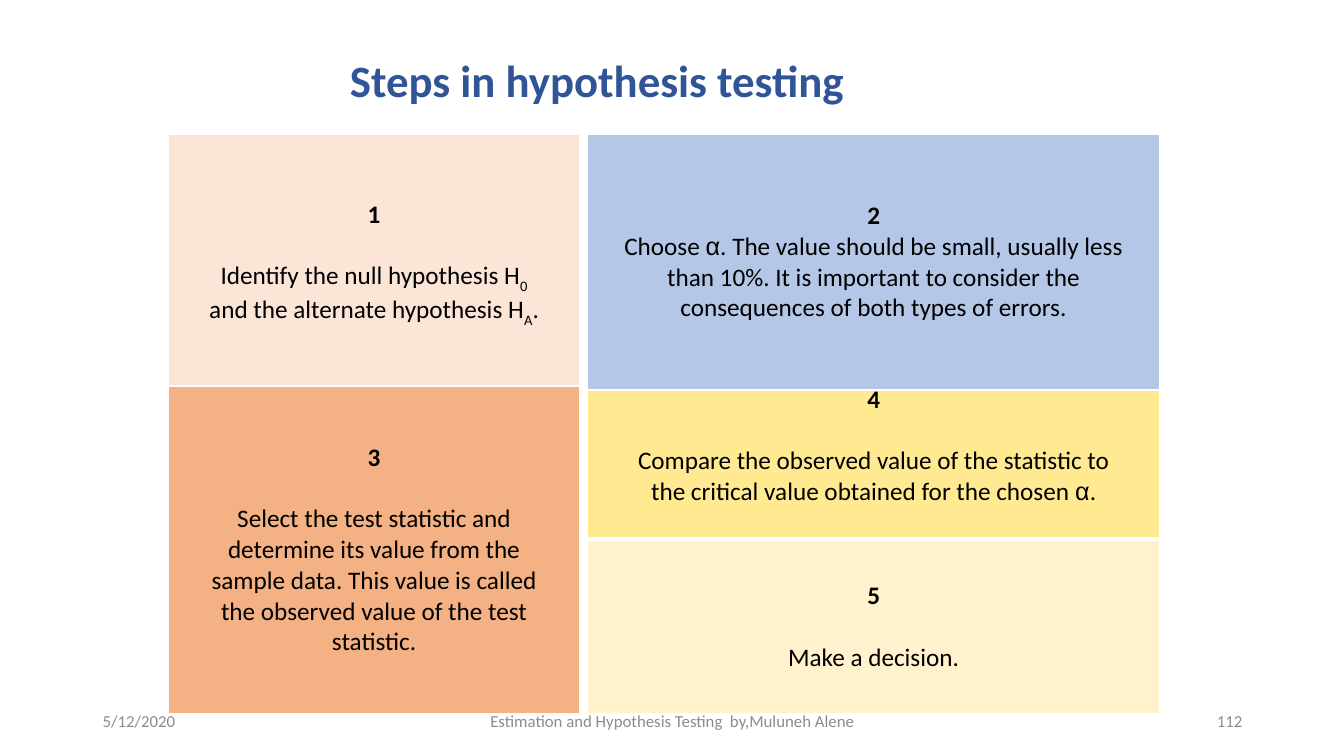
from pptx import Presentation
from pptx.dml.color import RGBColor
from pptx.enum.text import MSO_ANCHOR, PP_ALIGN
from pptx.util import Inches, Pt

LEFT, CENTER, RIGHT = PP_ALIGN.LEFT, PP_ALIGN.CENTER, PP_ALIGN.RIGHT
MIDDLE = MSO_ANCHOR.MIDDLE

BLUE = RGBColor(0x2F, 0x55, 0x97)
BLACK = RGBColor(0x00, 0x00, 0x00)
GREY = RGBColor(0x8C, 0x8C, 0x8C)
PEACH = RGBColor(0xFB, 0xE5, 0xD6)
ORANGE = RGBColor(0xF4, 0xB1, 0x83)
YELLOW = RGBColor(0xFF, 0xEA, 0x91)
CREAM = RGBColor(0xFF, 0xF2, 0xCC)
PALE_BLUE = RGBColor(0xB4, 0xC7, 0xE7)

BODY_FONT, GREEK_FONT = "Calibri", "Arial"
SLIDE_W, SLIDE_H = 13.33, 7.5
CELL_INSET = 0.31
BLANK_LINE = 22  # points, one line of 18 pt text

# Grid: (left, width) of the two columns, shared top and bottom
LEFT_COLUMN, RIGHT_COLUMN = (1.67, 4.08), (5.83, 5.67)
GRID_TOP, GRID_BOTTOM = 1.33, 7.08

# Step: number, column, top, height, fill, gap after number, text pieces.
# A piece is (text, style), the style being "", "sub" or "greek".
STEPS = [
    ("1", LEFT_COLUMN, GRID_TOP, 2.58, PEACH, BLANK_LINE,
     [("Identify the null hypothesis H", ""), ("0", "sub"),
      (" and the alternate hypothesis H", ""), ("A", "sub"), (".", "")]),
    ("3", LEFT_COLUMN, 3.83, GRID_BOTTOM - 3.83, ORANGE, BLANK_LINE,
     [("Select the test statistic and determine its value from the sample "
       "data. This value is called the observed value of the test "
       "statistic.", "")]),
    ("4", RIGHT_COLUMN, 3.5, 1.83, YELLOW, BLANK_LINE,
     [("Compare the observed value of the statistic to the critical value "
       "obtained for the chosen ", ""), ("α", "greek"), (".", "")]),
    ("5", RIGHT_COLUMN, 5.36, GRID_BOTTOM - 5.36, CREAM, BLANK_LINE,
     [("Make a decision.", "")]),
    ("2", RIGHT_COLUMN, GRID_TOP, 2.54, PALE_BLUE, 0,
     [("Choose ", ""), ("α", "greek"),
      (". The value should be small, usually less than 10%. It is important "
       "to consider the consequences of both types of errors.", "")]),
]

# Footer: text, left, width, alignment
FOOTERS = [
    ("Estimation and Hypothesis Testing  by,Muluneh Alene", 4.42, 4.5, CENTER),
    ("112", 9.42, 3, RIGHT),
    ("5/12/2020", 0.92, 3, LEFT),
]


def style_paragraph(paragraph, size, color, align, bold=False):
    paragraph.alignment = align
    font = paragraph.font
    font.name, font.size, font.bold = BODY_FONT, Pt(size), bold
    font.color.rgb = color


def add_label(slide, text, box, size, color, align=LEFT, bold=False, indent=0.1):
    frame = slide.shapes.add_textbox(*map(Inches, box)).text_frame
    frame.word_wrap = True
    frame.vertical_anchor = MIDDLE
    frame.margin_left = Inches(indent)
    paragraph = frame.paragraphs[0]
    paragraph.text = text
    style_paragraph(paragraph, size, color, align, bold)


def add_piece(paragraph, text, style):
    run = paragraph.add_run()
    run.text = text
    if style == "greek":
        run.font.name = GREEK_FONT
    elif style == "sub":
        run._r.get_or_add_rPr().set("baseline", "-25000")


def add_step(slide, number, column, top, height, fill, gap, pieces):
    left, width = column
    table = slide.shapes.add_table(
        1, 1, *map(Inches, (left, top, width, height))).table
    table.first_row = table.horz_banding = False
    cell = table.cell(0, 0)
    cell.fill.solid()
    cell.fill.fore_color.rgb = fill
    cell.vertical_anchor = MIDDLE
    cell.margin_left = cell.margin_right = Inches(CELL_INSET)
    cell.margin_top = cell.margin_bottom = Inches(CELL_INSET)

    heading = cell.text_frame.paragraphs[0]
    heading.text = number
    heading.space_after = Pt(gap)
    style_paragraph(heading, 18, BLACK, CENTER, bold=True)

    body = cell.text_frame.add_paragraph()
    style_paragraph(body, 18, BLACK, CENTER)
    for text, style in pieces:
        add_piece(body, text, style)


def main():
    prs = Presentation()
    prs.slide_width, prs.slide_height = Inches(SLIDE_W), Inches(SLIDE_H)
    slide = prs.slides.add_slide(prs.slide_layouts[6])

    # Title
    add_label(slide, "Steps in hypothesis testing", (2.17, 0.25, 8.92, 1.08),
              32, BLUE, bold=True, indent=1.3)

    # Step panels
    for step in STEPS:
        add_step(slide, *step)

    # Footer line
    for text, left, width, align in FOOTERS:
        add_label(slide, text, (left, 6.95, width, 0.4), 12, GREY, align)

    prs.save("out.pptx")


if __name__ == "__main__":
    main()
